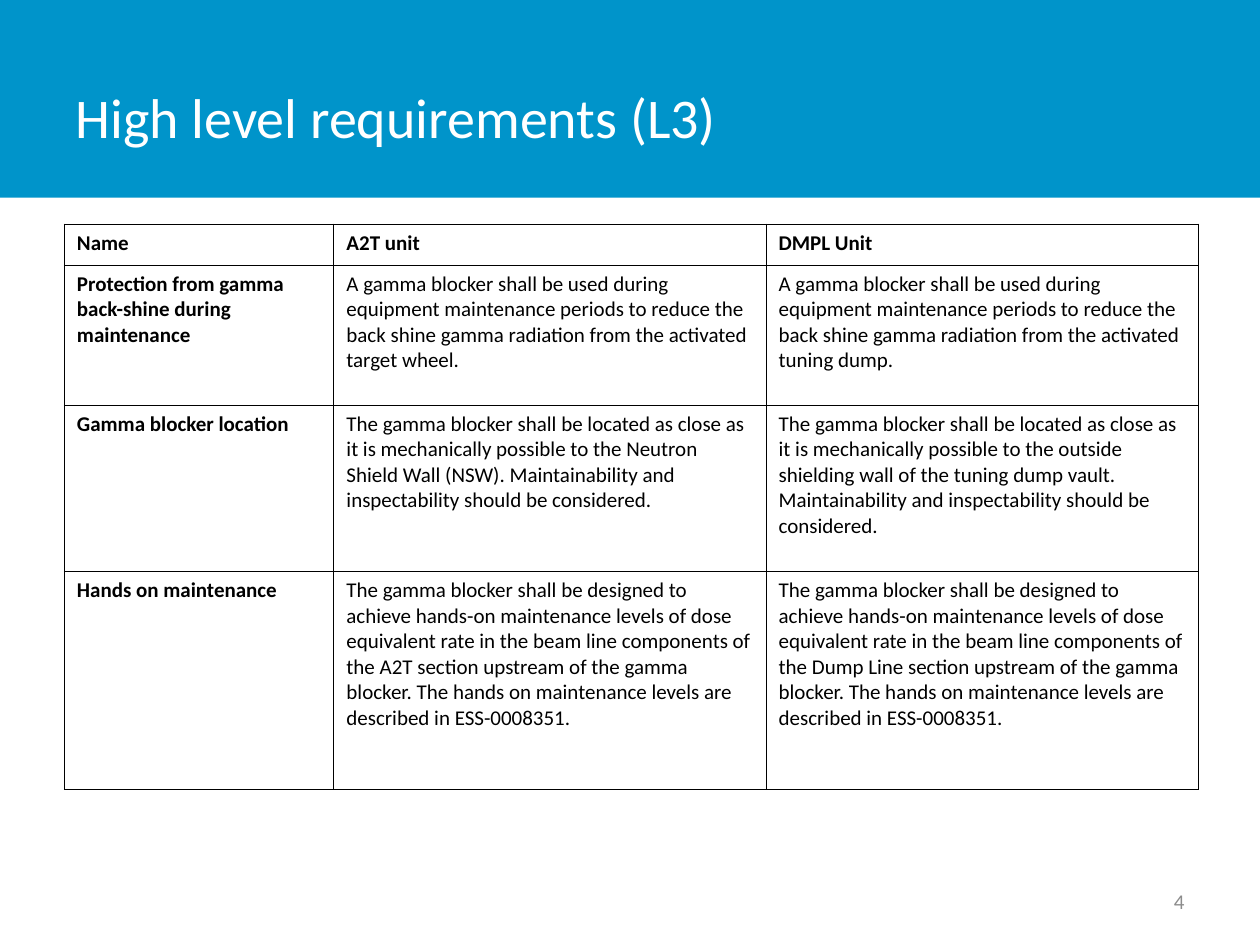
from lxml.etree import SubElement
from pptx import Presentation
from pptx.dml.color import RGBColor
from pptx.enum.shapes import MSO_SHAPE
from pptx.enum.text import MSO_ANCHOR, MSO_AUTO_SIZE, PP_ALIGN
from pptx.oxml.ns import qn
from pptx.util import Pt

BLUE = RGBColor(0x00, 0x94, 0xCA)
WHITE = RGBColor(0xFF, 0xFF, 0xFF)
BLACK = RGBColor(0x00, 0x00, 0x00)
GREY = RGBColor(0x8C, 0x8C, 0x8C)

TITLE_FONT = {"name": "Calibri", "size": Pt(32), "bold": False}
BODY_FONT = {"name": "Calibri", "size": Pt(12), "bold": False}
LABEL_FONT = {**BODY_FONT, "bold": True}

COL_WIDTHS = [154, 247, 247]
ROW_HEIGHTS = [23.4, 80, 95, 124.6]
REQUIREMENTS = [
    ["Name", "A2T unit", "DMPL Unit"],
    [
        "Protection from gamma back-shine during maintenance",
        "A gamma blocker shall be used during equipment maintenance periods to reduce "
        "the back shine gamma radiation from the activated target wheel.",
        "A gamma blocker shall be used during equipment maintenance periods to reduce "
        "the back shine gamma radiation from the activated tuning dump.",
    ],
    [
        "Gamma blocker location",
        "The gamma blocker shall be located as close as it is mechanically possible to "
        "the Neutron Shield Wall (NSW). Maintainability and inspectability should be "
        "considered.",
        "The gamma blocker shall be located as close as it is mechanically possible to "
        "the outside shielding wall of the tuning dump vault. Maintainability and "
        "inspectability should be considered.",
    ],
    [
        "Hands on maintenance",
        "The gamma blocker shall be designed to achieve hands-on maintenance levels of "
        "dose equivalent rate in the beam line components of the A2T section upstream "
        "of the gamma blocker. The hands on maintenance levels are described in "
        "ESS-0008351.",
        "The gamma blocker shall be designed to achieve hands-on maintenance levels of "
        "dose equivalent rate in the beam line components of the Dump Line section "
        "upstream of the gamma blocker. The hands on maintenance levels are described "
        "in ESS-0008351.",
    ],
]


def set_attrs(obj, values):
    for name, value in values.items():
        setattr(obj, name, value)


def write(tf, text, font, color, align=PP_ALIGN.LEFT):
    tf.word_wrap = True
    p = tf.paragraphs[0]
    p.alignment = align
    r = p.add_run()
    r.text = text
    set_attrs(r.font, font)
    r.font.color.rgb = color


def add_band(s, left, top, width, height):
    sp = s.shapes.add_shape(MSO_SHAPE.RECTANGLE, Pt(left), Pt(top), Pt(width), Pt(height))
    sp.shadow.inherit = False
    sp.fill.solid()
    sp.fill.fore_color.rgb = BLUE
    sp.line.fill.background()
    s.shapes._spTree.insert(2, sp._element)


def add_title(s, left, top, width, height):
    sp = s.shapes.title
    set_attrs(sp, {"left": Pt(left), "top": Pt(top), "width": Pt(width), "height": Pt(height)})
    tf = sp.text_frame
    set_attrs(tf, {"auto_size": MSO_AUTO_SIZE.NONE, "vertical_anchor": MSO_ANCHOR.MIDDLE})
    write(tf, "High level requirements (L3)", TITLE_FONT, WHITE)


def add_borders(cell):
    tc_pr = cell._tc.get_or_add_tcPr()
    for i, side in enumerate(("lnL", "lnR", "lnT", "lnB")):
        ln = SubElement(tc_pr, qn(f"a:{side}"), w=str(Pt(0.5)))
        fill = SubElement(ln, qn("a:solidFill"))
        SubElement(fill, qn("a:srgbClr"), val=str(BLACK))
        tc_pr.insert(i, ln)


def add_requirements(s, left, top):
    width, height = sum(COL_WIDTHS), sum(ROW_HEIGHTS)
    table = s.shapes.add_table(
        len(ROW_HEIGHTS), len(COL_WIDTHS), Pt(left), Pt(top), Pt(width), Pt(height)
    ).table
    set_attrs(table, {"first_row": False, "horz_banding": False})
    for column, col_width in zip(table.columns, COL_WIDTHS):
        column.width = Pt(col_width)
    for i, (row, row_height) in enumerate(zip(table.rows, ROW_HEIGHTS)):
        row.height = Pt(row_height)
        for j, cell in enumerate(row.cells):
            font = LABEL_FONT if i == 0 or j == 0 else BODY_FONT
            write(cell.text_frame, REQUIREMENTS[i][j], font, BLACK)
            cell.fill.background()
            add_borders(cell)


def add_page_number(s, left, top, width, height):
    tf = s.shapes.add_textbox(Pt(left), Pt(top), Pt(width), Pt(height)).text_frame
    tf.vertical_anchor = MSO_ANCHOR.MIDDLE
    write(tf, "4", BODY_FONT, GREY, PP_ALIGN.RIGHT)


def main():
    prs = Presentation()
    set_attrs(prs, {"slide_width": Pt(720), "slide_height": Pt(540)})
    s = prs.slides.add_slide(prs.slide_layouts[5])
    add_band(s, 0, 0, 720, 113)
    add_title(s, 36, 21.6, 562, 90)
    add_requirements(s, 36.8, 128)
    add_page_number(s, 516, 500.5, 168, 28.8)
    prs.save("out.pptx")


if __name__ == "__main__":
    main()
